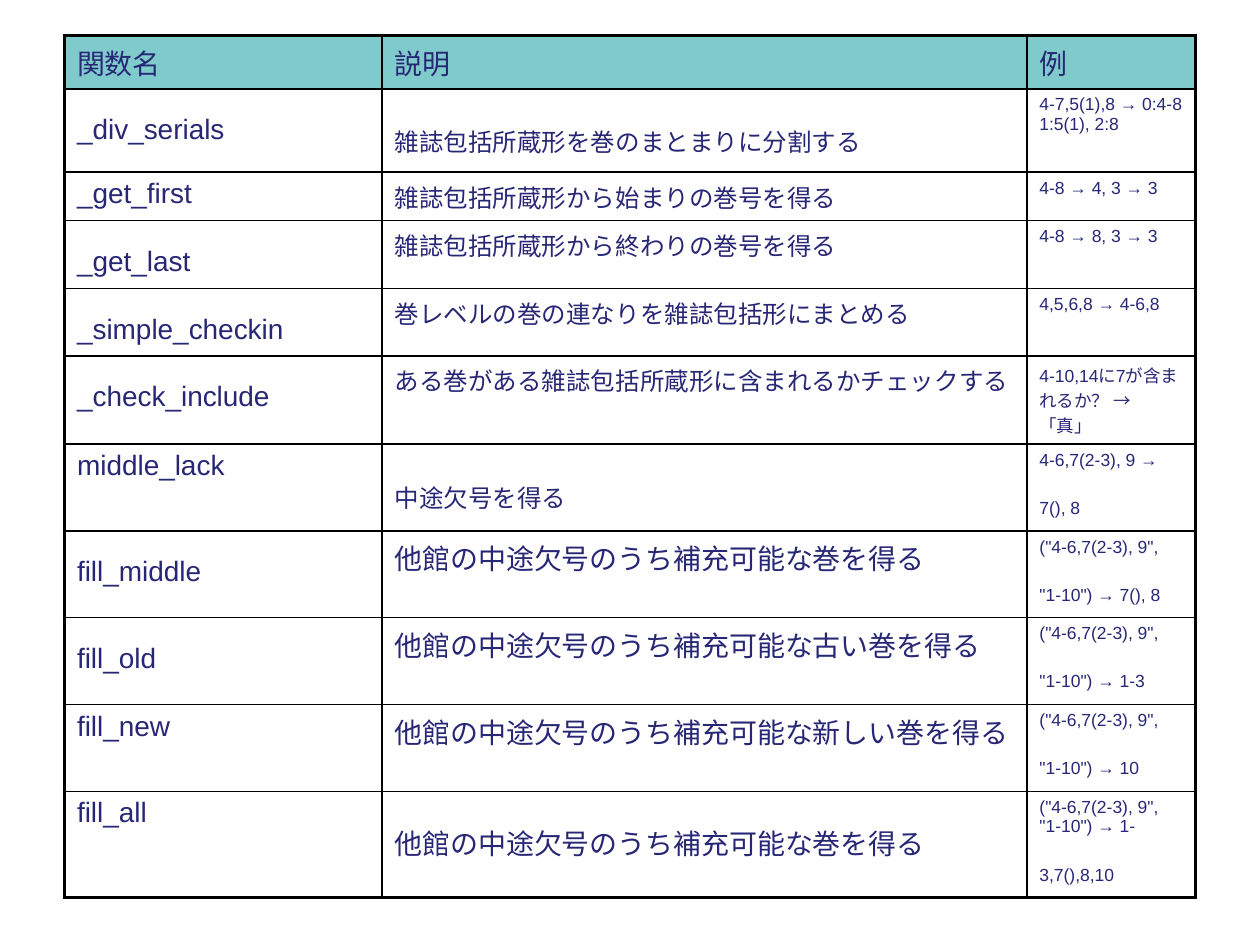
"""Build a slide with a table of functions for serial holdings."""
import lxml.etree
import pptx
import pptx.dml.color
import pptx.oxml.ns
import pptx.util

Cm = pptx.util.Cm
Pt = pptx.util.Pt
RGBColor = pptx.dml.color.RGBColor
qn = pptx.oxml.ns.qn

NAVY = RGBColor(0x27, 0x27, 0x76)
TEAL = RGBColor(0x00, 0x99, 0x99)
BLACK = RGBColor(0x00, 0x00, 0x00)

COLUMN_WIDTHS = (6.4, 13, 3.4)
HEADINGS = ("関数名", "説明", "例")
NAME_SIZE, EXAMPLE_SIZE = 16, 10
FUNCTIONS = (
    (1.68, "_div_serials ", 14, "雑誌包括所蔵形を巻のまとまりに分割する ",
     "4-7,5(1),8 → 0:4-8 1:5(1), 2:8"),
    (0.97, "_get_first", 14, "雑誌包括所蔵形から始まりの巻号を得る", "4-8 → 4, 3 → 3"),
    (1.37, "_get_last ", 14, "雑誌包括所蔵形から終わりの巻号を得る", "4-8 → 8, 3 → 3"),
    (1.35, "_simple_checkin ", 14, "巻レベルの巻の連なりを雑誌包括形にまとめる",
     "4,5,6,8 → 4-6,8"),
    (1.78, "_check_include ", 14, "ある巻がある雑誌包括所蔵形に含まれるかチェックする",
     "4-10,14に7が含まれるか？ →　「真」"),
    (1.75, "middle_lack", 14, "中途欠号を得る ", "4-6,7(2-3), 9 → 7(), 8 "),
    (1.75, "fill_middle ", 16, "他館の中途欠号のうち補充可能な巻を得る",
     '("4-6,7(2-3), 9", "1-10") → 7(), 8 '),
    (1.75, "fill_old ", 16, "他館の中途欠号のうち補充可能な古い巻を得る",
     '("4-6,7(2-3), 9", "1-10") → 1-3 '),
    (1.75, "fill_new", 16, "他館の中途欠号のうち補充可能な新しい巻を得る",
     '("4-6,7(2-3), 9", "1-10") → 10 '),
    (2.13, "fill_all", 16, "他館の中途欠号のうち補充可能な巻を得る ",
     '("4-6,7(2-3), 9", "1-10") → 1-3,7(),8,10 '),
)


class FunctionSlide:
    font_name = "Arial"
    tail_size = 28
    outer_line, inner_line = 2.25, 1
    heading_alpha = 50

    def __init__(self, deck):
        self.slide = deck.slides.add_slide(deck.slide_layouts[6])

    def table(self, left, top, widths, rows):
        heights = [height for height, _ in rows]
        grid = self.slide.shapes.add_table(
            len(rows), len(widths), Cm(left), Cm(top),
            Cm(sum(widths)), Cm(sum(heights))).table
        grid.first_row = grid.horz_banding = False
        for column, width in zip(grid.columns, widths):
            column.width = Cm(width)
        for r, (height, entries) in enumerate(rows):
            grid.rows[r].height = Cm(height)
            for c, (text, size) in enumerate(entries):
                cell = grid.cell(r, c)
                self.text(cell, text, size)
                self.borders(cell, {
                    "L": c == 0, "R": c == len(widths) - 1,
                    "T": r == 0, "B": r == len(rows) - 1})
                self.fill(cell, heading=r == 0)

    def text(self, cell, text, size):
        paragraph = cell.text_frame.paragraphs[0]
        paragraph.text = text.rstrip(" ")
        self.style(paragraph.runs[0], size)
        if text.endswith(" "):
            tail = paragraph.add_run()
            tail.text = " "
            self.style(tail, self.tail_size)

    def style(self, run, size):
        run.font.name = self.font_name
        run.font.size = Pt(size)
        run.font.color.rgb = NAVY

    def borders(self, cell, outer_sides):
        properties = cell._tc.get_or_add_tcPr()
        for side in "LRTB":
            width = self.outer_line if outer_sides[side] else self.inner_line
            line = lxml.etree.SubElement(
                properties, qn(f"a:ln{side}"), w=str(Pt(width)))
            solid = lxml.etree.SubElement(line, qn("a:solidFill"))
            lxml.etree.SubElement(solid, qn("a:srgbClr"), val=str(BLACK))

    def fill(self, cell, heading):
        if not heading:
            cell.fill.background()
            return
        cell.fill.solid()
        cell.fill.fore_color.rgb = TEAL
        color = cell._tc.tcPr.find(f"{qn('a:solidFill')}/{qn('a:srgbClr')}")
        lxml.etree.SubElement(
            color, qn("a:alpha"), val=str(self.heading_alpha * 1000))


def main():
    deck = pptx.Presentation()
    deck.slide_width, deck.slide_height = Cm(25.4), Cm(19.05)
    rows = [(1.07, [(heading, NAME_SIZE) for heading in HEADINGS])]
    for height, name, size, description, example in FUNCTIONS:
        rows.append((height, [(name, NAME_SIZE), (description, size),
                              (example, EXAMPLE_SIZE)]))
    FunctionSlide(deck).table(1.3, 0.72, COLUMN_WIDTHS, rows)
    deck.save("out.pptx")


if __name__ == "__main__":
    main()
